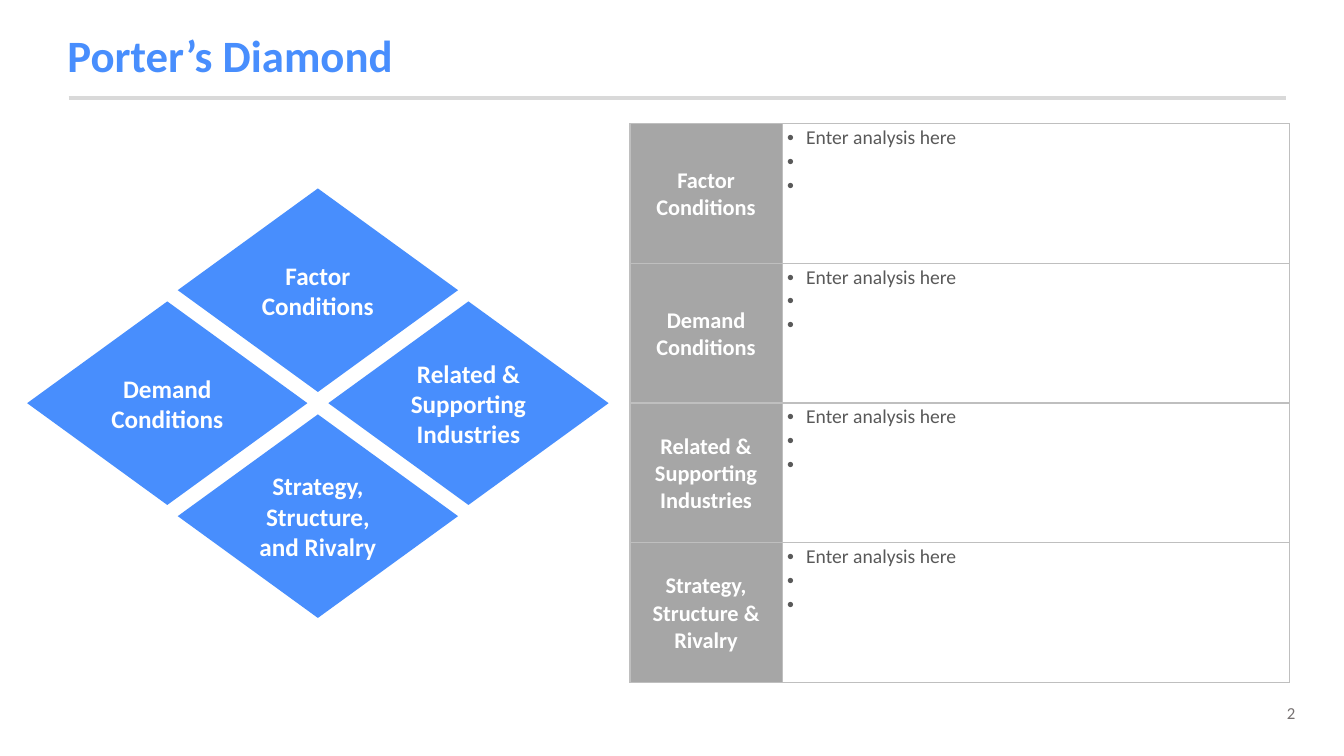
from lxml import etree
from pptx import Presentation
from pptx.dml.color import RGBColor
from pptx.enum.shapes import MSO_CONNECTOR, MSO_SHAPE
from pptx.enum.text import MSO_ANCHOR, MSO_AUTO_SIZE, PP_ALIGN
from pptx.oxml.ns import qn
from pptx.util import Pt

DIAMOND = MSO_SHAPE.DIAMOND
STRAIGHT = MSO_CONNECTOR.STRAIGHT
TOP, MIDDLE = MSO_ANCHOR.TOP, MSO_ANCHOR.MIDDLE
LEFT, CENTER, RIGHT = PP_ALIGN.LEFT, PP_ALIGN.CENTER, PP_ALIGN.RIGHT
NO_FIT = MSO_AUTO_SIZE.NONE
BLUE, WHITE, RULE_GRAY = "488EFD", "FFFFFF", "D9D9D9"
HEAD_GRAY, BORDER_GRAY, BODY_GRAY, NUMBER_GRAY = "A6A6A6", "BFBFBF", "595959", "767171"

DIAMONDS = [
    (1, 0, "Factor Conditions"),
    (0, 1, "Demand Conditions"),
    (2, 1, "Related & Supporting Industries"),
    (1, 2, "Strategy, Structure, and Rivalry"),
]
ROW_HEADS = [
    "Factor\nConditions",
    "Demand Conditions",
    "Related & Supporting Industries",
    "Strategy, Structure & Rivalry",
]
ANALYSIS = "Enter analysis here\n \n "


def color(hex_value):
    """Turn a hex string into a colour."""
    return RGBColor.from_string(hex_value)


def write(frame, text, size, hex_value, bold=False, align=LEFT, anchor=TOP):
    """Write text into a frame with one format for every paragraph."""
    frame.text = text
    frame.vertical_anchor = anchor
    for para in frame.paragraphs:
        para.alignment = align
        for span in para.runs:
            for name, value in {"name": "Calibri", "size": Pt(size), "bold": bold}.items():
                setattr(span.font, name, value)
            span.font.color.rgb = color(hex_value)


def add_header(page, left, top, width, height):
    """Place the title and the rule below it."""
    title = page.shapes.title
    places = {"left": left - 8, "top": top, "width": width - 82, "height": height}
    for name, value in places.items():
        setattr(title, name, Pt(value))
    write(title.text_frame, "Porter’s Diamond", 32, BLUE, True, LEFT, MIDDLE)
    title.text_frame.auto_size = NO_FIT
    title.text_frame.paragraphs[0].line_spacing = 0.9
    rule_top = Pt(top + height + 1)
    rule = page.shapes.add_connector(STRAIGHT, Pt(left), rule_top, Pt(left + width), rule_top)
    rule.line.color.rgb = color(RULE_GRAY)
    rule.line.width = Pt(3)
    etree.SubElement(rule.element.spPr, qn("a:effectLst"))


def add_diamonds(page, left, top, width, height):
    """Place the four diamonds on a three by three grid in the box."""
    diamond_width, diamond_height = 200.2, 145.4
    step_x, step_y = (width - diamond_width) / 2, (height - diamond_height) / 2
    for column, row, label in DIAMONDS:
        diamond = page.shapes.add_shape(
            DIAMOND, Pt(left + column * step_x), Pt(top + row * step_y),
            Pt(diamond_width), Pt(diamond_height))
        diamond.shadow.inherit = False
        diamond.fill.solid()
        diamond.fill.fore_color.rgb = color(BLUE)
        diamond.line.fill.background()
        write(diamond.text_frame, label, 18, WHITE, True, CENTER, MIDDLE)


def style_cell(cell, fill):
    """Set the margins, borders and fill of a cell."""
    margins = {"margin_left": 3.6, "margin_top": 1.44, "margin_right": 3.6, "margin_bottom": 0}
    for name, value in margins.items():
        setattr(cell, name, Pt(value))
    properties = cell._tc.get_or_add_tcPr()
    for side in ("a:lnL", "a:lnR", "a:lnT", "a:lnB"):
        border = etree.SubElement(properties, qn(side), w=str(Pt(1)))
        solid = etree.SubElement(border, qn("a:solidFill"))
        etree.SubElement(solid, qn("a:srgbClr"), val=BORDER_GRAY)
    cell.fill.solid()
    cell.fill.fore_color.rgb = color(fill)


def add_bullets(frame):
    """Give every paragraph of a frame a hanging bullet."""
    for para in frame.paragraphs:
        properties = para._p.get_or_add_pPr()
        properties.set("marL", str(Pt(13.5)))
        properties.set("indent", str(-Pt(13.5)))
        etree.SubElement(properties, qn("a:buFont"), typeface="Arial")
        etree.SubElement(properties, qn("a:buChar"), char="•")


def add_analysis_table(page, left, top, width, height):
    """Place the table with one row of analysis for each diamond."""
    table = page.shapes.add_table(
        len(ROW_HEADS), 2, Pt(left), Pt(top), Pt(width), Pt(height)).table
    table.first_row = table.horz_banding = False
    head_width = 108.7
    table.columns[0].width = Pt(head_width)
    table.columns[1].width = Pt(width - head_width)
    for row, label in enumerate(ROW_HEADS):
        table.rows[row].height = Pt(height / len(ROW_HEADS))
        head, body = table.cell(row, 0), table.cell(row, 1)
        style_cell(head, HEAD_GRAY)
        style_cell(body, WHITE)
        write(head.text_frame, label, 16, WHITE, True, CENTER)
        write(body.text_frame, ANALYSIS, 14, BODY_GRAY)
        head.vertical_anchor = MIDDLE
        body.vertical_anchor = TOP
        add_bullets(body.text_frame)


def add_page_number(page, left, top, width, height):
    """Place the page number."""
    box = page.shapes.add_textbox(Pt(left), Pt(top), Pt(width), Pt(height))
    box.text_frame.word_wrap = True
    write(box.text_frame, "2", 12, NUMBER_GRAY, align=RIGHT)


def main():
    """Build the slide and save it."""
    deck = Presentation()
    deck.slide_width, deck.slide_height = Pt(960), Pt(540)
    page = deck.slides.add_slide(deck.slide_layouts[5])
    add_header(page, 49, 13.7, 869.7, 55.4)
    add_diamonds(page, 19.4, 134.6, 415.3, 306.8)
    add_analysis_table(page, 450, 88.4, 471, 399)
    add_page_number(page, 859, 498.2, 73.4, 21.6)
    deck.save("out.pptx")


if __name__ == "__main__":
    main()
